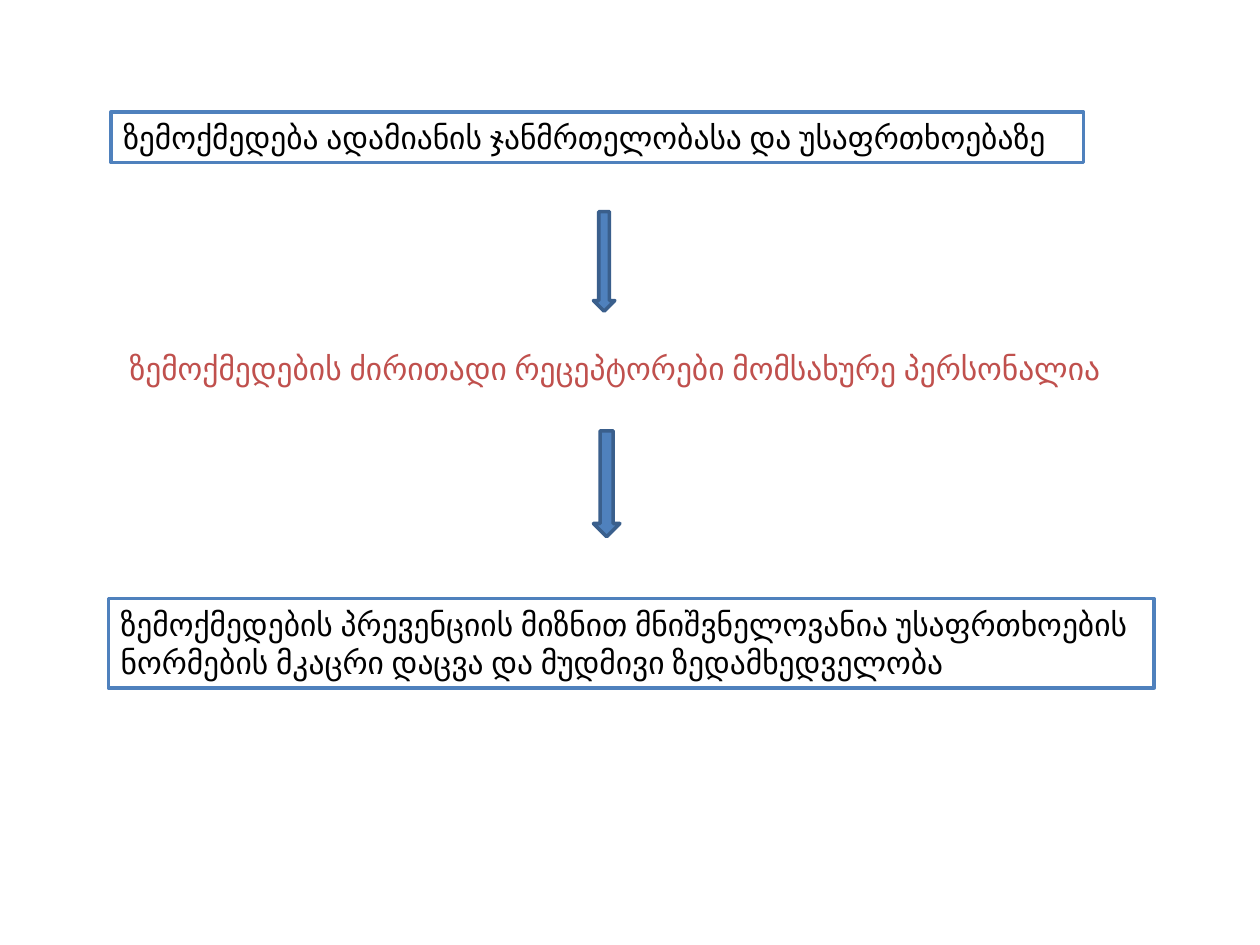
"""Build a slide of three statements linked by two down arrows."""
from dataclasses import dataclass
from typing import Optional

import pptx
import pptx.dml.color
import pptx.enum.shapes
import pptx.enum.text
import pptx.util

Inches = pptx.util.Inches
Color = pptx.dml.color.RGBColor
Shape = pptx.enum.shapes.MSO_SHAPE


@dataclass(frozen=True)
class Theme:
    font: str = "Roboto"
    text_size: float = 18
    line_width: float = 2
    white: str = "FFFFFF"
    black: str = "000000"
    blue: str = "4F81BD"
    dark_blue: str = "3A5F8C"
    red: str = "C0504D"


@dataclass(frozen=True)
class Box:
    left: float
    top: float
    width: float
    height: float

    def lengths(self) -> list:
        return [Inches(value) for value in (self.left, self.top, self.width, self.height)]


@dataclass(frozen=True)
class Statement:
    text: str
    box: Box
    color: str
    border: Optional[str] = None


THEME = Theme()
STATEMENTS = (
    Statement("ზემოქმედება ადამიანის ჯანმრთელობასა და უსაფრთხოებაზე",
              Box(0.88, 0.89, 7.72, 0.4), THEME.black, THEME.blue),
    Statement("ზემოქმედების ძირითადი რეცეპტორები მომსახურე პერსონალია",
              Box(0.93, 2.72, 8.19, 0.4), THEME.red),
    Statement("ზემოქმედების პრევენციის მიზნით მნიშვნელოვანია უსაფრთხოების "
              "ნორმების მკაცრი დაცვა და მუდმივი ზედამხედველობა",
              Box(0.86, 4.75, 8.3, 0.71), THEME.black, THEME.blue),
)
ARROWS = (Box(4.71, 1.68, 0.17, 0.79), Box(4.71, 3.42, 0.21, 0.84))


def add_filled_shape(slide, kind, box: Box, fill: str, line: str):
    shape = slide.shapes.add_shape(kind, *box.lengths())
    shape.shadow.inherit = False
    shape.fill.solid()
    shape.fill.fore_color.rgb = Color.from_string(fill)
    shape.line.color.rgb = Color.from_string(line)
    shape.line.width = pptx.util.Pt(THEME.line_width)
    return shape


def add_statement(slide, statement: Statement) -> None:
    if statement.border:
        shape = add_filled_shape(slide, Shape.RECTANGLE, statement.box, THEME.white, statement.border)
    else:
        shape = slide.shapes.add_textbox(*statement.box.lengths())
    frame_format = {
        "word_wrap": True,
        "auto_size": pptx.enum.text.MSO_AUTO_SIZE.SHAPE_TO_FIT_TEXT,
        "vertical_anchor": pptx.enum.text.MSO_ANCHOR.TOP,
    }
    for name, value in frame_format.items():
        setattr(shape.text_frame, name, value)
    paragraph = shape.text_frame.paragraphs[0]
    paragraph.alignment = pptx.enum.text.PP_ALIGN.LEFT
    run = paragraph.add_run()
    run.text = statement.text
    font_format = {"name": THEME.font, "size": pptx.util.Pt(THEME.text_size)}
    for name, value in font_format.items():
        setattr(run.font, name, value)
    run.font.color.rgb = Color.from_string(statement.color)


def main() -> None:
    presentation = pptx.Presentation()
    presentation.slide_width = Inches(10)
    presentation.slide_height = Inches(7.5)
    slide = presentation.slides.add_slide(presentation.slide_layouts[6])
    for statement in STATEMENTS:
        add_statement(slide, statement)
    for box in ARROWS:
        add_filled_shape(slide, Shape.DOWN_ARROW, box, THEME.blue, THEME.dark_blue)
    presentation.save("out.pptx")


if __name__ == "__main__":
    main()
